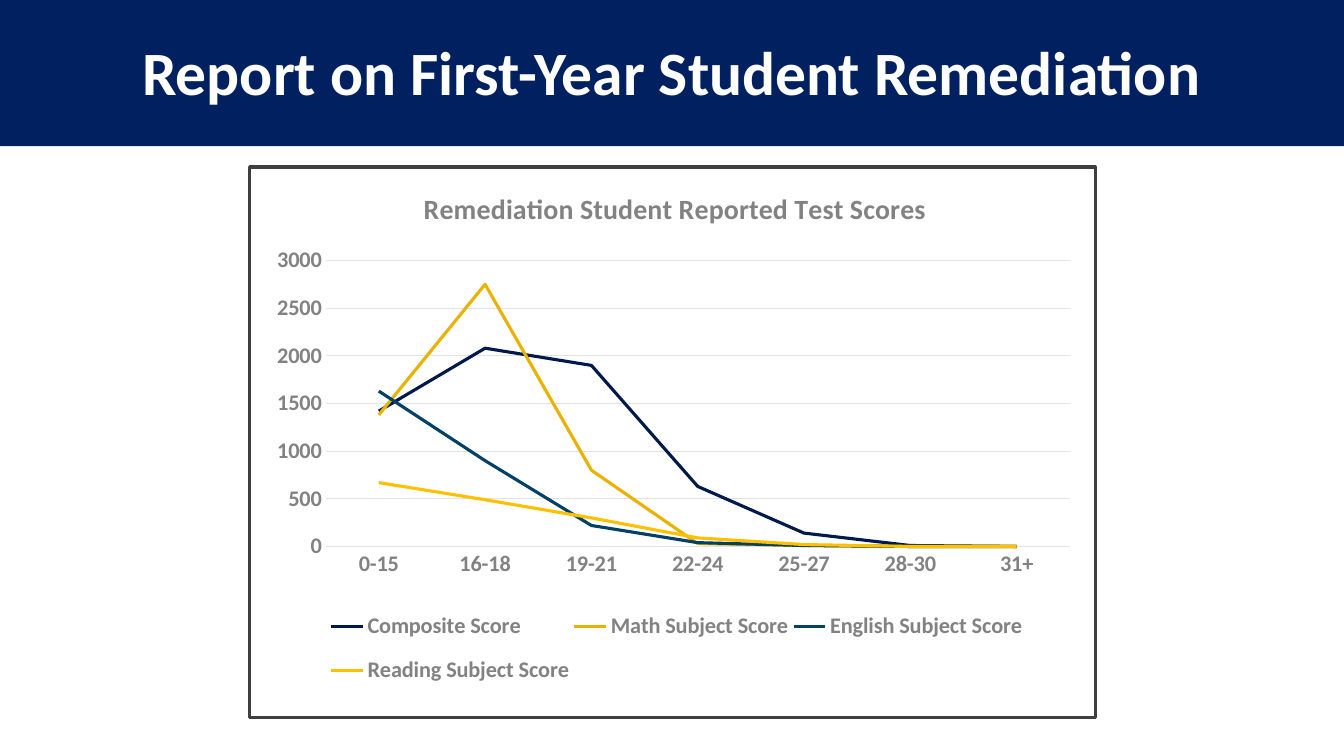
from dataclasses import dataclass

from lxml import etree
from pptx import Presentation
from pptx import util as u
from pptx.chart.data import CategoryChartData
from pptx.dml.color import RGBColor
from pptx.enum import chart as ch, text
from pptx.oxml import parse_xml
from pptx.oxml.ns import nsdecls, qn


@dataclass(frozen=True)
class Theme:
    font: str = "Calibri"
    navy: str = "002060"
    white: str = "FFFFFF"
    frame: str = "3F3F3F"
    label: str = "828282"
    grid: str = "E2E2E2"
    title_size: int = 44
    chart_title_size: int = 20
    label_size: int = 16
    line_width: float = 2.25
    grid_width: float = 0.75


THEME = Theme()
BANDS = ["0-15", "16-18", "19-21", "22-24", "25-27", "28-30", "31+"]
SCORES = [
    ("Composite Score", "00194C", [1420, 2080, 1900, 630, 140, 10, 0]),
    ("Math Subject Score", "EAB200", [1380, 2750, 800, 30, 10, 0, 0]),
    ("English Subject Score", "014067", [1630, 900, 220, 40, 10, 0, 0]),
    ("Reading Subject Score", "FFC000", [670, 490, 300, 90, 20, 0, 0]),
]


def rgb(value):
    return RGBColor.from_string(value)


def set_font(font, size, color):
    font.name = THEME.font
    font.size = u.Pt(size)
    font.bold = True
    font.color.rgb = rgb(color)


def set_line(line, color, width):
    line.color.rgb = rgb(color)
    line.width = u.Pt(width)


def set_layout(element, inner=False, **fractions):
    old = element.find(qn("c:layout"))
    if old is not None:
        element.remove(old)
    layout = parse_xml(f"<c:layout {nsdecls('c')}><c:manualLayout/></c:layout>")
    settings = [("layoutTarget", "inner")] if inner else []
    settings += [(f"{key}Mode", "edge") for key in "xy"]
    settings += fractions.items()
    for tag, value in settings:
        etree.SubElement(layout[0], qn(f"c:{tag}")).set("val", str(value))
    overlay = element.find(qn("c:overlay"))
    if overlay is None:
        element.insert(0, layout)
    else:
        overlay.addprevious(layout)


def frame_chart(chart):
    chart.element.find(qn("c:chart")).addnext(parse_xml(
        f"<c:spPr {nsdecls('c', 'a')}>"
        f'<a:solidFill><a:srgbClr val="{THEME.white}"/></a:solidFill>'
        f'<a:ln w="{u.Pt(THEME.line_width)}"><a:solidFill>'
        f'<a:srgbClr val="{THEME.frame}"/></a:solidFill></a:ln></c:spPr>'))


def title_band(s, left, top, width, height):
    sp = s.shapes.title
    sp.left, sp.top, sp.width, sp.height = left, top, width, height
    sp.fill.solid()
    sp.fill.fore_color.rgb = rgb(THEME.navy)
    tf = sp.text_frame
    tf.text = "Report on First-Year Student Remediation"
    tf.auto_size = text.MSO_AUTO_SIZE.NONE
    tf.vertical_anchor = text.MSO_ANCHOR.MIDDLE
    tf.margin_bottom = 0
    p = tf.paragraphs[0]
    p.alignment = text.PP_ALIGN.CENTER
    p.line_spacing = 0.9
    set_font(p.font, THEME.title_size, THEME.white)


def style_axes(chart):
    for axis in (chart.category_axis, chart.value_axis):
        axis.major_tick_mark = axis.minor_tick_mark = ch.XL_TICK_MARK.NONE
        set_font(axis.tick_labels.font, THEME.label_size, THEME.label)
    set_line(chart.category_axis.format.line, THEME.grid, THEME.grid_width)
    values = chart.value_axis
    values.minimum_scale, values.maximum_scale, values.major_unit = 0, 3000, 500
    values.format.line.fill.background()
    set_line(values.major_gridlines.format.line, THEME.grid, THEME.grid_width)


def score_chart(s, left, top, width, height):
    data = CategoryChartData()
    data.categories = BANDS
    for name, _, values in SCORES:
        data.add_series(name, values)
    chart = s.shapes.add_chart(
        ch.XL_CHART_TYPE.LINE, left, top, width, height, data).chart
    set_font(chart.font, THEME.label_size, THEME.label)
    frame_chart(chart)

    chart.has_title = True
    tf = chart.chart_title.text_frame
    tf.text = "Remediation Student Reported Test Scores"
    set_font(tf.paragraphs[0].font, THEME.chart_title_size, THEME.label)
    style_axes(chart)

    chart.has_legend = True
    chart.legend.position = ch.XL_LEGEND_POSITION.BOTTOM
    chart.legend.include_in_layout = False
    set_font(chart.legend.font, THEME.label_size, THEME.label)

    chart.plots[0].vary_by_categories = False
    for series, (_, color, _) in zip(chart.plots[0].series, SCORES):
        series.smooth = False
        series.marker.style = ch.XL_MARKER_STYLE.NONE
        set_line(series.format.line, color, THEME.line_width)

    root = chart.element.find(qn("c:chart"))
    set_layout(root.find(qn("c:title")), x=0.2, y=0.03)
    set_layout(root.find(qn("c:plotArea")), inner=True,
               x=0.09, y=0.17, w=0.88, h=0.52)
    set_layout(root.find(qn("c:legend")), x=0.09, y=0.78, w=0.83, h=0.19)


def main():
    prs = Presentation()
    prs.slide_width, prs.slide_height = u.Cm(33.87), u.Cm(19.05)
    s = prs.slides.add_slide(prs.slide_layouts[5])
    title_band(s, 0, 0, prs.slide_width, u.Cm(3.68))
    score_chart(s, u.Cm(6.25), u.Cm(4.17), u.Cm(21.39), u.Cm(13.94))
    prs.save("out.pptx")


if __name__ == "__main__":
    main()
